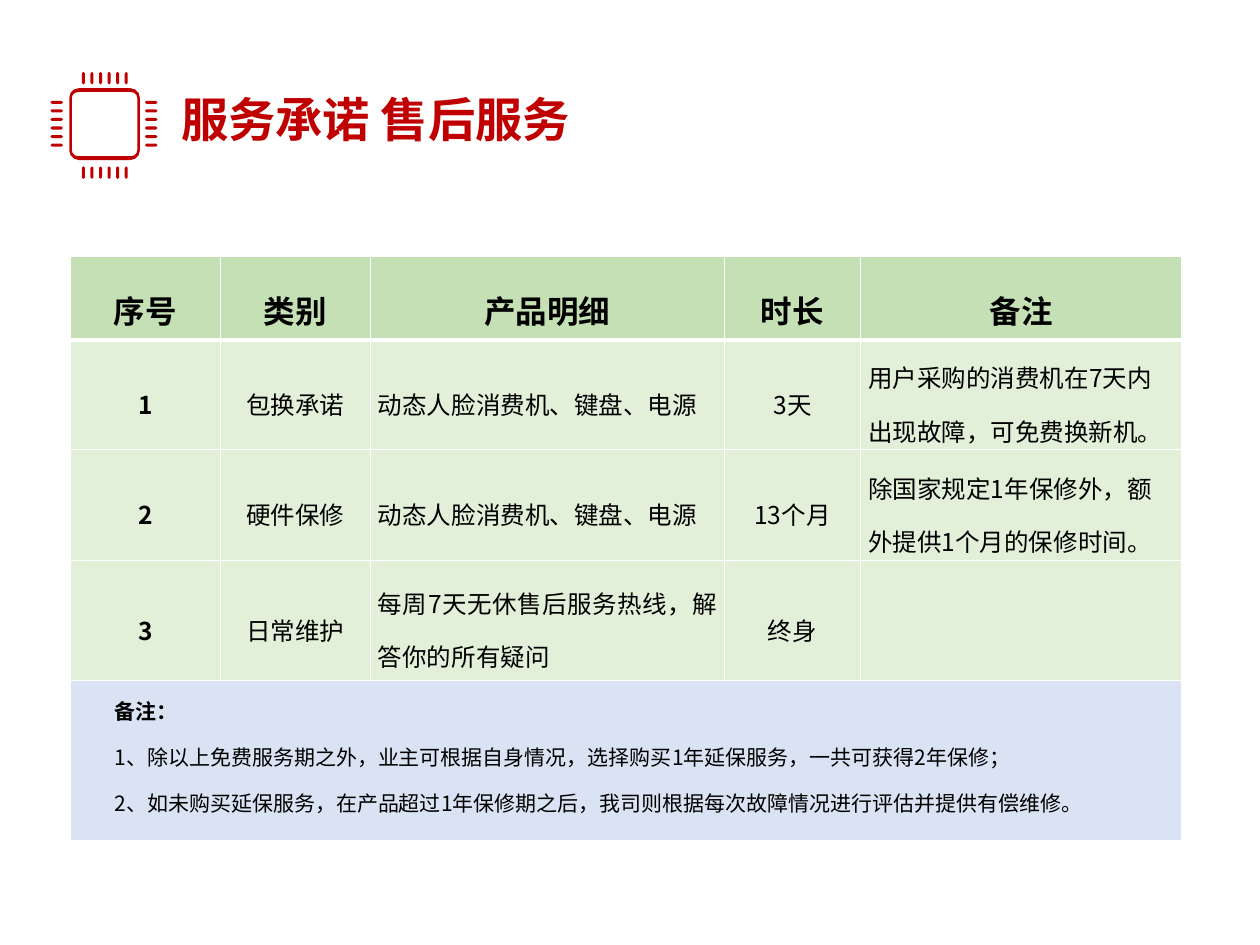
from dataclasses import dataclass
from itertools import product
from math import cos, pi, sin

from lxml.etree import SubElement
from pptx import Presentation
from pptx.dml.color import RGBColor
from pptx.enum.text import MSO_ANCHOR, PP_ALIGN
from pptx.oxml.ns import qn
from pptx.util import Inches, Pt

FONT = "Noto Sans CJK SC"
RED, BLACK, WHITE = "C00000", "000000", "FFFFFF"
HEADER_GREEN, BODY_GREEN, NOTE_BLUE = "C5E0B4", "E2F0D9", "DAE3F3"
LEFT, CENTER, JUSTIFY = PP_ALIGN.LEFT, PP_ALIGN.CENTER, PP_ALIGN.JUSTIFY

COLUMN_WIDTHS = (1.19, 1.19, 2.81, 1.08, 2.55)
ROW_HEIGHTS = (0.67, 0.87, 0.88, 0.95, 1.27)
HEADINGS = ("序号", "类别", "产品明细", "时长", "备注")
NOTES = (
    "备注：",
    "1、除以上免费服务期之外，业主可根据自身情况，选择购买1年延保服务，一共可获得2年保修；",
    "2、如未购买延保服务，在产品超过1年保修期之后，我司则根据每次故障情况进行评估并提供有偿维修。",
)


@dataclass(frozen=True)
class Service:
    number: str
    category: str
    detail: str
    duration: str
    remark: str
    detail_align: PP_ALIGN = JUSTIFY


SERVICES = (
    Service("1", "包换承诺", "动态人脸消费机、键盘、电源", "3天",
            "用户采购的消费机在7天内出现故障，可免费换新机。", LEFT),
    Service("2", "硬件保修", "动态人脸消费机、键盘、电源", "13个月",
            "除国家规定1年保修外，额外提供1个月的保修时间。"),
    Service("3", "日常维护", "每周7天无休售后服务热线，解答你的所有疑问", "终身", ""),
)


@dataclass(frozen=True)
class RoundedBox:
    left: float
    top: float
    width: float
    height: float
    radius: float
    steps: int = 1

    def outline(self) -> list[tuple[int, int]]:
        """Return the distinct corner points as one clockwise outline."""
        r = self.radius
        x1, y1 = self.left + r, self.top + r
        x2, y2 = self.left + self.width - r, self.top + self.height - r
        centres = ((x2, y2), (x1, y2), (x1, y1), (x2, y1))
        points = [
            (round(x + r * cos(angle), 4), round(y + r * sin(angle), 4))
            for quarter, (x, y) in enumerate(centres)
            for angle in ((quarter + step / self.steps) * pi / 2
                          for step in range(self.steps + 1))
        ]
        return [(Inches(x), Inches(y)) for x, y in dict.fromkeys(points)]


def rgb(code: str) -> RGBColor:
    """Turn a hex string into a colour."""
    return RGBColor.from_string(code)


def write(paragraph, text: str, *, size: float, color: str = BLACK, bold: bool = False,
          align: PP_ALIGN = LEFT, spacing: float = 1.5, indent: float = 0) -> None:
    """Write one formatted run into a paragraph."""
    paragraph.alignment = align
    paragraph.line_spacing = spacing
    if indent:
        properties = paragraph._p.get_or_add_pPr()
        properties.set("marL", "0")
        properties.set("indent", str(Inches(indent)))
    run = paragraph.add_run()
    run.text = text
    font = run.font
    font.size, font.bold, font.name = Pt(size), bold, FONT
    font.color.rgb = rgb(color)
    SubElement(run._r.get_or_add_rPr(), qn("a:ea"), typeface=FONT)


def style_cell(cell, color: str, top: float = 1, bottom: float = 1) -> None:
    """Set the white borders, margins, anchor and fill of a cell."""
    properties = cell._tc.get_or_add_tcPr()
    for side, width in (("L", 1), ("R", 1), ("T", top), ("B", bottom)):
        border = SubElement(properties, qn(f"a:ln{side}"), w=str(Pt(width)))
        SubElement(SubElement(border, qn("a:solidFill")), qn("a:srgbClr"), val=WHITE)
    cell.margin_left = cell.margin_right = Inches(0.06)
    cell.margin_top = cell.margin_bottom = 0
    cell.vertical_anchor = MSO_ANCHOR.MIDDLE
    cell.fill.solid()
    cell.fill.fore_color.rgb = rgb(color)


def draw_chip(slide) -> None:
    """Draw the chip icon as a single outline with pins on four sides."""
    pin_length, pin_width, pitch = 0.1, 0.024, 0.068
    boxes = [
        RoundedBox(0.65 + pitch * i, y, pin_width, pin_length, pin_width / 2)
        for i, y in product(range(6), (0.57, 1.32))
    ] + [
        RoundedBox(x, 0.8 + pitch * i, pin_length, pin_width, pin_width / 2)
        for i, x in product(range(6), (0.4, 1.15))
    ]
    contours = [box.outline() for box in boxes]
    contours.append(RoundedBox(0.55, 0.7, 0.56, 0.57, 0.075, 3).outline())
    contours.append(RoundedBox(0.57, 0.73, 0.52, 0.51, 0.05, 3).outline()[::-1])
    builder = slide.shapes.build_freeform(*contours[0][0])
    for index, points in enumerate(contours):
        if index:
            builder.move_to(*points[0])
        builder.add_line_segments(points[1:], close=True)
    chip = builder.convert_to_shape()
    chip.shadow.inherit = False
    chip.fill.solid()
    chip.fill.fore_color.rgb = rgb(RED)
    chip.line.fill.background()


def draw_title(slide) -> None:
    """Place the slide title beside the chip."""
    title = slide.shapes.add_textbox(Inches(1.34), Inches(0.69), Inches(4.13), Inches(0.56))
    frame = title.text_frame
    frame.word_wrap = True
    frame.vertical_anchor = MSO_ANCHOR.MIDDLE
    write(frame.paragraphs[0], "服务承诺 售后服务", size=27, color=RED, bold=True, spacing=0.9)


def draw_services(slide) -> None:
    """Fill the service table and its merged notes row."""
    table = slide.shapes.add_table(
        len(ROW_HEIGHTS), len(COLUMN_WIDTHS), Inches(0.56), Inches(2.03),
        Inches(sum(COLUMN_WIDTHS)), Inches(sum(ROW_HEIGHTS))).table
    table.first_row = table.horz_banding = False
    for column, width in zip(table.columns, COLUMN_WIDTHS):
        column.width = Inches(width)
    for row, height in zip(table.rows, ROW_HEIGHTS):
        row.height = Inches(height)

    for cell, heading in zip(table.rows[0].cells, HEADINGS):
        style_cell(cell, HEADER_GREEN, bottom=3)
        write(cell.text_frame.paragraphs[0], heading, size=18, bold=True, align=CENTER)

    for index, service in enumerate(SERVICES, start=1):
        entries = (
            (service.number, CENTER), (service.category, CENTER),
            (service.detail, service.detail_align), (service.duration, CENTER),
            (service.remark, LEFT),
        )
        for column, (text, align) in enumerate(entries):
            cell = table.cell(index, column)
            style_cell(cell, BODY_GREEN, top=3 if index == 1 else 1)
            if text:
                write(cell.text_frame.paragraphs[0], text, size=14,
                      bold=column == 0, align=align)

    last = len(ROW_HEIGHTS) - 1
    for cell in table.rows[last].cells:
        style_cell(cell, NOTE_BLUE)
    notes = table.cell(last, 0)
    notes.merge(table.cell(last, len(COLUMN_WIDTHS) - 1))
    notes.margin_bottom = Inches(0.35)
    frame = notes.text_frame
    for index, note in enumerate(NOTES):
        paragraph = frame.add_paragraph() if index else frame.paragraphs[0]
        write(paragraph, note, size=12, bold=index == 0, align=JUSTIFY, indent=0.29)


def main() -> None:
    """Build and save the after-sales service slide."""
    presentation = Presentation()
    presentation.slide_width, presentation.slide_height = Inches(10), Inches(7.5)
    slide = presentation.slides.add_slide(presentation.slide_layouts[6])
    draw_chip(slide)
    draw_title(slide)
    draw_services(slide)
    presentation.save("out.pptx")


if __name__ == "__main__":
    main()
